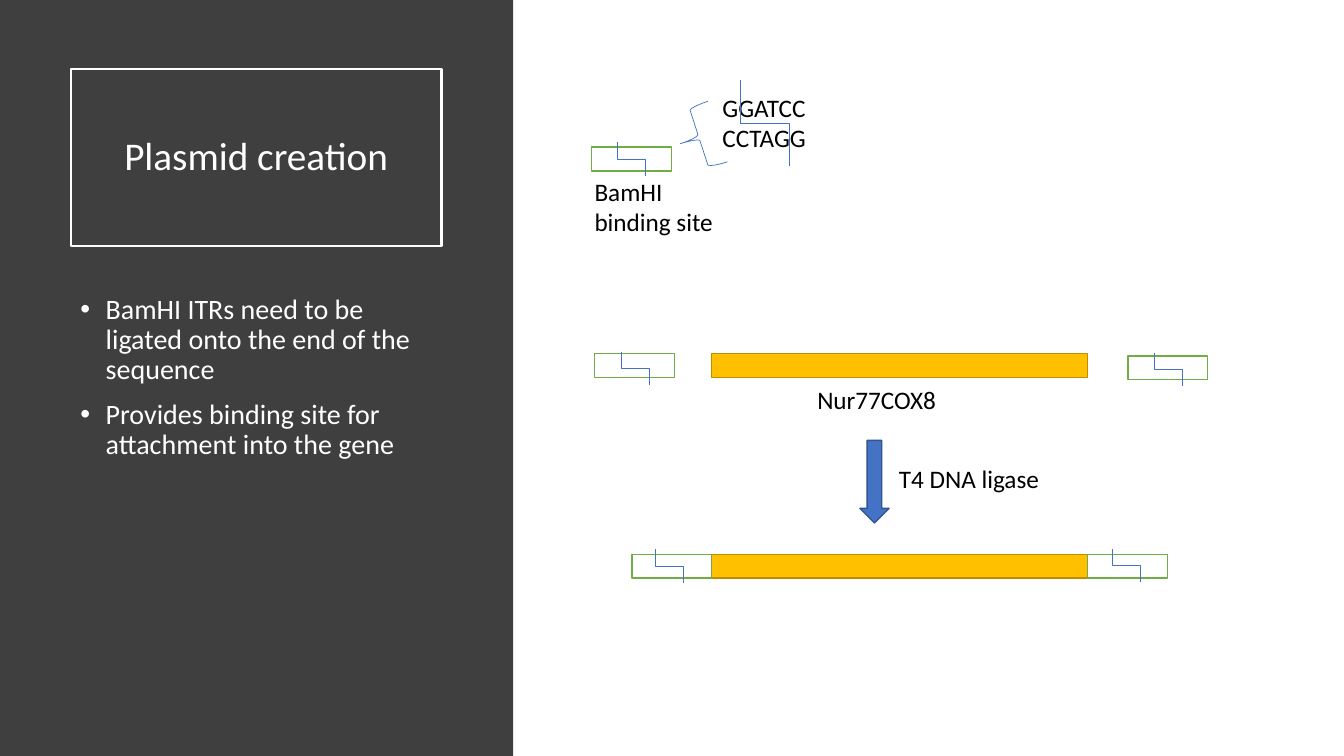
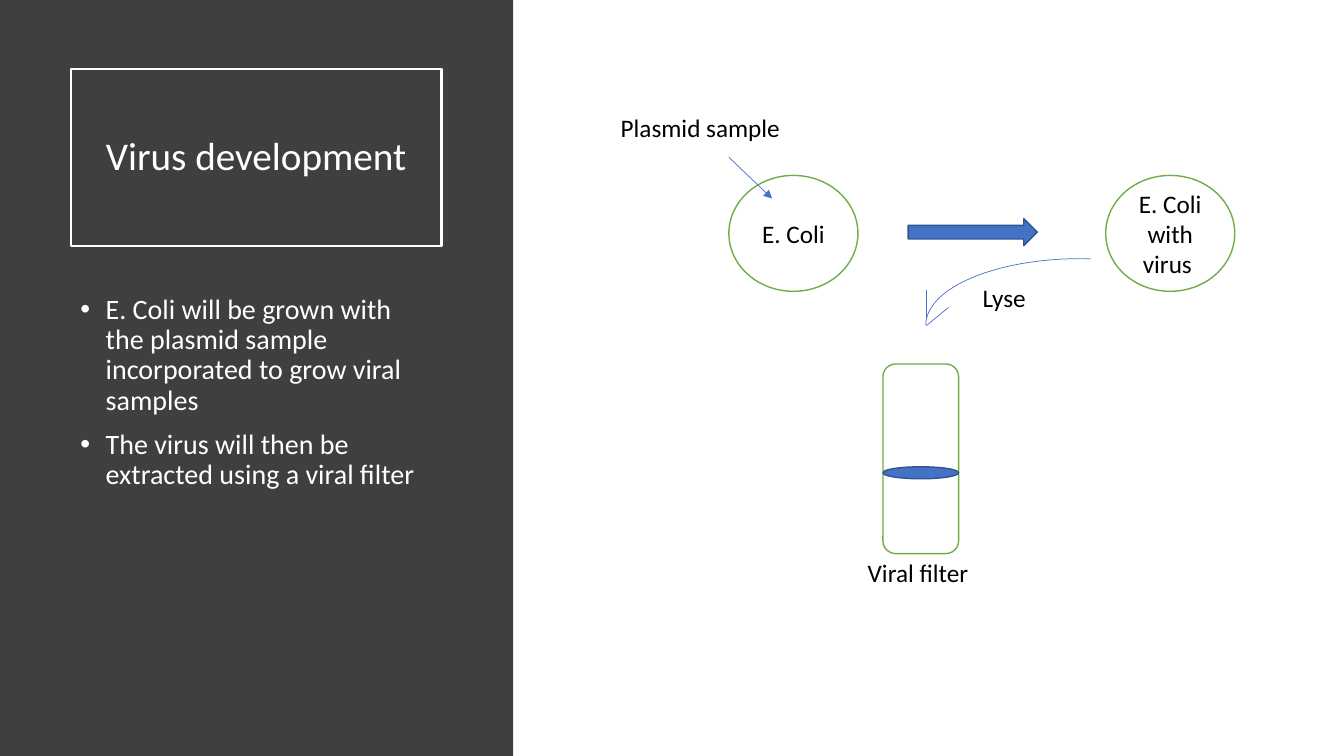
from pptx import Presentation
from pptx.dml.color import RGBColor
from pptx.enum.shapes import MSO_CONNECTOR, MSO_SHAPE
from pptx.enum.text import MSO_ANCHOR, MSO_AUTO_SIZE, PP_ALIGN
from pptx.oxml.ns import qn
from pptx.util import Pt
from lxml import etree

RECT, ROUND_RECT, OVAL = MSO_SHAPE.RECTANGLE, MSO_SHAPE.ROUNDED_RECTANGLE, MSO_SHAPE.OVAL
DOWN_ARROW, RIGHT_ARROW = MSO_SHAPE.DOWN_ARROW, MSO_SHAPE.RIGHT_ARROW
LEFT_BRACE, ARC = MSO_SHAPE.LEFT_BRACE, MSO_SHAPE.ARC
STRAIGHT, ELBOW = MSO_CONNECTOR.STRAIGHT, MSO_CONNECTOR.ELBOW
MIDDLE, CENTER, LEFT = MSO_ANCHOR.MIDDLE, PP_ALIGN.CENTER, PP_ALIGN.LEFT
GROW, FIXED = MSO_AUTO_SIZE.SHAPE_TO_FIT_TEXT, MSO_AUTO_SIZE.NONE

WHITE = RGBColor(0xFF, 0xFF, 0xFF)
BLACK = RGBColor(0x00, 0x00, 0x00)
CHARCOAL = RGBColor(0x3F, 0x3F, 0x3F)
GREEN = RGBColor(0x70, 0xAD, 0x47)
BLUE = RGBColor(0x44, 0x72, 0xC4)
DARK_BLUE = RGBColor(0x32, 0x54, 0x91)
GOLD = RGBColor(0xFF, 0xC0, 0x00)
DARK_GOLD = RGBColor(0xBD, 0x8E, 0x00)

FONT = "Calibri"
SLIDE_W, SLIDE_H = 960, 540
PANEL_W = 366.5
DIAGRAM = (366, 0)  # left and top of the white region
SITE_W, BAR_H = 57, 17
GENE_W = 268.6
CELL_W, CELL_H = 92.2, 82.8


# Basic parts
def add_run(p, text, size, color):
    r = p.add_run()
    r.text = text
    r.font.name, r.font.size, r.font.color.rgb = FONT, Pt(size), color


def add_shape(s, kind, x, y, w, h, fill=None, line=None, weight=1):
    sp = s.shapes.add_shape(kind, Pt(x), Pt(y), Pt(w), Pt(h))
    sp.shadow.inherit = False
    if fill is None:
        sp.fill.background()
    else:
        sp.fill.solid()
        sp.fill.fore_color.rgb = fill
    if line is None:
        sp.line.fill.background()
    else:
        sp.line.color.rgb = line
        sp.line.width = Pt(weight)
    return sp


def add_label(s, x, y, w, *lines):
    sp = s.shapes.add_textbox(Pt(x), Pt(y), Pt(w), Pt(7.2 + 21.6 * len(lines)))
    tf = sp.text_frame
    tf.word_wrap = False
    tf.auto_size = GROW
    for i, text in enumerate(lines):
        p = tf.add_paragraph() if i else tf.paragraphs[0]
        p.alignment = LEFT
        add_run(p, text, 18, BLACK)


def add_line(s, x1, y1, x2, y2, kind=STRAIGHT, arrow=False):
    c = s.shapes.add_connector(kind, Pt(x1), Pt(y1), Pt(x2), Pt(y2))
    c.line.color.rgb = BLUE
    c.line.width = Pt(0.5)
    if arrow:
        etree.SubElement(c.line._get_or_add_ln(), qn("a:tailEnd"), type="triangle")
    etree.SubElement(c._element.spPr, qn("a:effectLst"))
    return c


def add_cut(s, x, y, w, h):
    """Stepped cut going down, across and down, as a turned elbow connector."""
    cx, cy = x + w / 2, y + h / 2
    c = add_line(s, cx - h / 2, cy + w / 2, cx + h / 2, cy - w / 2, ELBOW)
    c._element.spPr.find(qn("a:xfrm")).set("rot", str(270 * 60000))


# Dark panel with title and bullets
def add_panel(s, title, bullets, x=0, y=0):
    panel = add_shape(s, RECT, x, y, PANEL_W, SLIDE_H, CHARCOAL)
    s.shapes._spTree.insert(2, panel._element)

    sp = s.shapes.title
    sp.left, sp.top, sp.width, sp.height = Pt(x + 50.4), Pt(y + 49), Pt(265), Pt(126.7)
    sp.line.color.rgb = WHITE
    sp.line.width = Pt(1.5)
    tf = sp.text_frame
    tf.word_wrap, tf.auto_size, tf.vertical_anchor = True, FIXED, MIDDLE
    p = tf.paragraphs[0]
    p.alignment, p.line_spacing = CENTER, 0.9
    add_run(p, title, 28, WHITE)

    sp = s.shapes.add_textbox(Pt(x + 50.4), Pt(y + 207.4), Pt(265), Pt(269.3))
    tf = sp.text_frame
    tf.word_wrap = True
    for i, text in enumerate(bullets):
        p = tf.add_paragraph() if i else tf.paragraphs[0]
        p.line_spacing, p.space_before = 0.9, Pt(10)
        pPr = p._p.get_or_add_pPr()
        pPr.set("marL", str(Pt(18)))
        pPr.set("indent", str(-Pt(18)))
        etree.SubElement(pPr, qn("a:buFont"), typeface="Arial")
        etree.SubElement(pPr, qn("a:buChar"), char="•")
        add_run(p, text, 20, WHITE)


# Plasmid diagram
def add_site(s, x, y, cut_dx, cut_dy):
    add_shape(s, RECT, x, y, SITE_W, BAR_H, WHITE, GREEN)
    add_cut(s, x + cut_dx, y + cut_dy, 20, 24)


def add_gene(s, x, y):
    add_shape(s, RECT, x, y, GENE_W, BAR_H, GOLD, DARK_GOLD)


def add_plasmid_diagram(s, x, y):
    gene_x = x + 142.3

    # Binding site and its sequence
    add_site(s, x + 56.6, y + 105.1, 18.7, -3.6)
    add_label(s, x + 51.6, y + 122.4, 100, "BamHI", "binding site")
    brace = add_shape(s, LEFT_BRACE, x + 119.3, y + 75.6, 28, 45.4, line=BLUE, weight=0.5)
    brace.rotation = 342
    add_label(s, x + 143, y + 62.6, 74.2, "GGATCC", "CCTAGG")
    add_cut(s, x + 162.5, y + 56.9, 35.3, 61.9)

    # Separate pieces
    add_site(s, x + 58.8, y + 252.7, 18.7, -1.4)
    add_site(s, x + 439.7, y + 254.2, 18.7, -2.2)
    add_gene(s, gene_x, y + 252.7)
    add_label(s, x + 210.7, y + 270.7, 100, "Nur77COX8")

    # Ligation
    add_shape(s, DOWN_ARROW, x + 248.2, y + 314.6, 20.9, 59, BLUE, DARK_BLUE)
    add_label(s, x + 269, y + 327.6, 116, "T4 DNA ligase")

    # Joined product
    add_gene(s, gene_x, y + 396)
    add_site(s, gene_x + GENE_W, y + 396, 18, -4)
    add_site(s, gene_x - SITE_W, y + 396, 16.6, -3.6)


# Virus diagram
def add_cell(s, x, y, text):
    sp = add_shape(s, OVAL, x, y, CELL_W, CELL_H, WHITE, GREEN)
    tf = sp.text_frame
    tf.word_wrap, tf.vertical_anchor = True, MIDDLE
    p = tf.paragraphs[0]
    p.alignment = CENTER
    add_run(p, text, 18, BLACK)


def add_virus_diagram(s, x, y):
    # Growing the virus
    add_cell(s, x + 154.6, y + 125.3, "E. Coli")
    add_cell(s, x + 423.8, y + 125.3, "E. Coli with virus ")
    add_shape(s, RIGHT_ARROW, x + 282.7, y + 156.2, CELL_W, 19.4, BLUE, DARK_BLUE)
    add_label(s, x + 70.3, y + 77, 129.6, "Plasmid sample")
    add_line(s, x + 154.6, y + 112.3, x + 185.5, y + 141.8, arrow=True)

    # Filter
    add_shape(s, ROUND_RECT, x + 264.7, y + 260, 54, 135.4, WHITE, GREEN)
    add_shape(s, OVAL, x + 264.7, y + 333.4, 54, 8.6, BLUE, DARK_BLUE)
    add_label(s, x + 246.7, y + 394.6, 87.1, "Viral filter")

    # Curved lysis arrow
    add_label(s, x + 328.8, y + 198, 46.1, "Lyse")
    arc = add_shape(s, ARC, x + 358.3, y + 121.7, 95, 221, line=BLUE, weight=0.5)
    arc.adjustments[0], arc.adjustments[1] = 162, 5.21
    arc.rotation = 270
    add_line(s, x + 295.7, y + 228.2, x + 295.7, y + 207.4)
    add_line(s, x + 311.5, y + 219.6, x + 295.7, y + 232.6)


SLIDES = [
    ("Plasmid creation",
     ["BamHI ITRs need to be ligated onto the end of the sequence",
      "Provides binding site for attachment into the gene"],
     add_plasmid_diagram),
    ("Virus development",
     ["E. Coli will be grown with the plasmid sample incorporated to grow viral samples",
      "The virus will then be extracted using a viral filter"],
     add_virus_diagram),
]


def main():
    prs = Presentation()
    prs.slide_width, prs.slide_height = Pt(SLIDE_W), Pt(SLIDE_H)
    for title, bullets, add_diagram in SLIDES:
        s = prs.slides.add_slide(prs.slide_layouts[5])
        add_panel(s, title, bullets)
        add_diagram(s, *DIAGRAM)
    prs.save("out.pptx")


if __name__ == "__main__":
    main()
